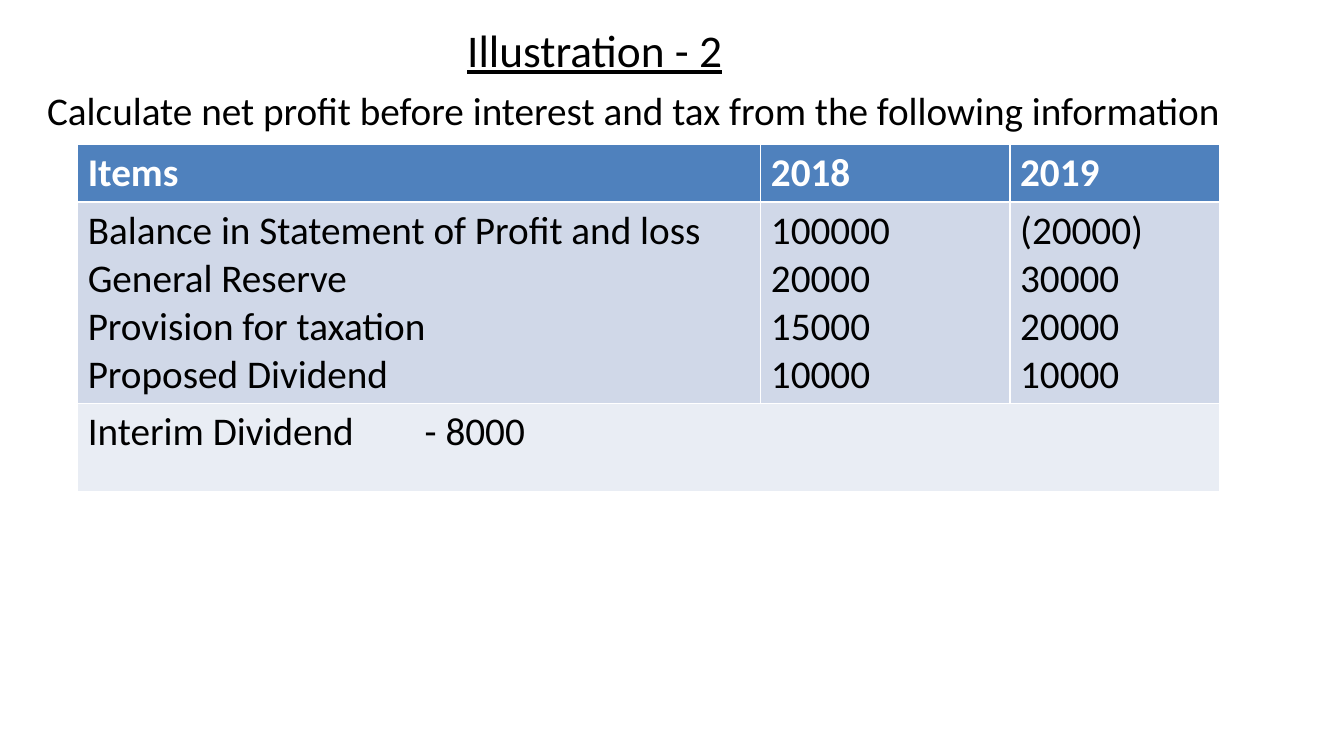
from dataclasses import dataclass
from pptx import Presentation
from pptx.dml.color import RGBColor as Rgb
from pptx.enum.text import MSO_ANCHOR as Anchor, PP_ALIGN as Align
from pptx.oxml.ns import qn
from pptx.util import Pt
from lxml.etree import SubElement as Sub

TITLE = "Illustration - 2"
TASK = "Calculate net profit before interest and tax from the following information"
HEAD = ["Items", "2018", "2019"]
ITEMS = [
    ("Balance in Statement of Profit and loss", "100000", "(20000)"),
    ("General Reserve", "20000", "30000"),
    ("Provision for taxation", "15000", "20000"),
    ("Proposed Dividend", "10000", "10000"),
]
NOTE = "Interim Dividend\t- 8000"

COLS = [488, 178, 149.5]
ROWS = [41.5, 144, 62.5]
NOTE_TAB = 240.7


@dataclass(frozen=True)
class Theme:
    font: str = "Calibri"
    title: float = 32.4
    body: float = 28
    ink: str = "000000"
    white: str = "FFFFFF"
    head: str = "4F81BD"
    band: str = "D0D8E8"
    pale: str = "E9EDF4"


LOOK = Theme()


def write(frame, text, size=LOOK.body, color=LOOK.ink, bold=False, line=False):
    frame.text = text
    for para in frame.paragraphs:
        for run in para.runs:
            font = run.font
            font.name, font.size = LOOK.font, Pt(size)
            font.bold, font.underline = bold, line
            font.color.rgb = Rgb.from_string(color)


def place(shape, *box):
    shape.left, shape.top, shape.width, shape.height = map(Pt, box)


def add_title(slide):
    title = slide.shapes.title
    place(title, 10.8, 12.2, 828, 46)
    frame = title.text_frame
    write(frame, TITLE, LOOK.title, line=True)
    frame.vertical_anchor = Anchor.MIDDLE
    frame.paragraphs[0].alignment = Align.CENTER


def add_task(slide):
    box = slide.shapes.add_textbox(Pt(26.6), Pt(58.3), Pt(923), Pt(44.6))
    box.text_frame.word_wrap = True
    write(box.text_frame, TASK)


def add_grid(slide):
    size = Pt(sum(COLS)), Pt(sum(ROWS))
    grid = slide.shapes.add_table(
        len(ROWS), len(COLS), Pt(55.5), Pt(102.8), *size).table
    for col, width in zip(grid.columns, COLS):
        col.width = Pt(width)
    for row, height, fill in zip(grid.rows, ROWS, (LOOK.head, LOOK.band, LOOK.pale)):
        row.height = Pt(height)
        for cell in row.cells:
            cell.fill.solid()
            cell.fill.fore_color.rgb = Rgb.from_string(fill)

    for col, (label, values) in enumerate(zip(HEAD, zip(*ITEMS))):
        write(grid.cell(0, col).text_frame, label, color=LOOK.white, bold=True)
        write(grid.cell(1, col).text_frame, "\n".join(values))

    note = grid.cell(2, 0)
    note.merge(grid.cell(2, len(COLS) - 1))
    write(note.text_frame, NOTE)
    props = note.text_frame.paragraphs[0]._p.get_or_add_pPr()
    tabs = Sub(props, qn("a:tabLst"))
    Sub(tabs, qn("a:tab"), pos=str(Pt(NOTE_TAB)), algn="l")


def main():
    deck = Presentation()
    deck.slide_width, deck.slide_height = Pt(960), Pt(540)
    slide = deck.slides.add_slide(deck.slide_layouts[5])
    add_title(slide)
    add_task(slide)
    add_grid(slide)
    deck.save("out.pptx")


if __name__ == "__main__":
    main()
